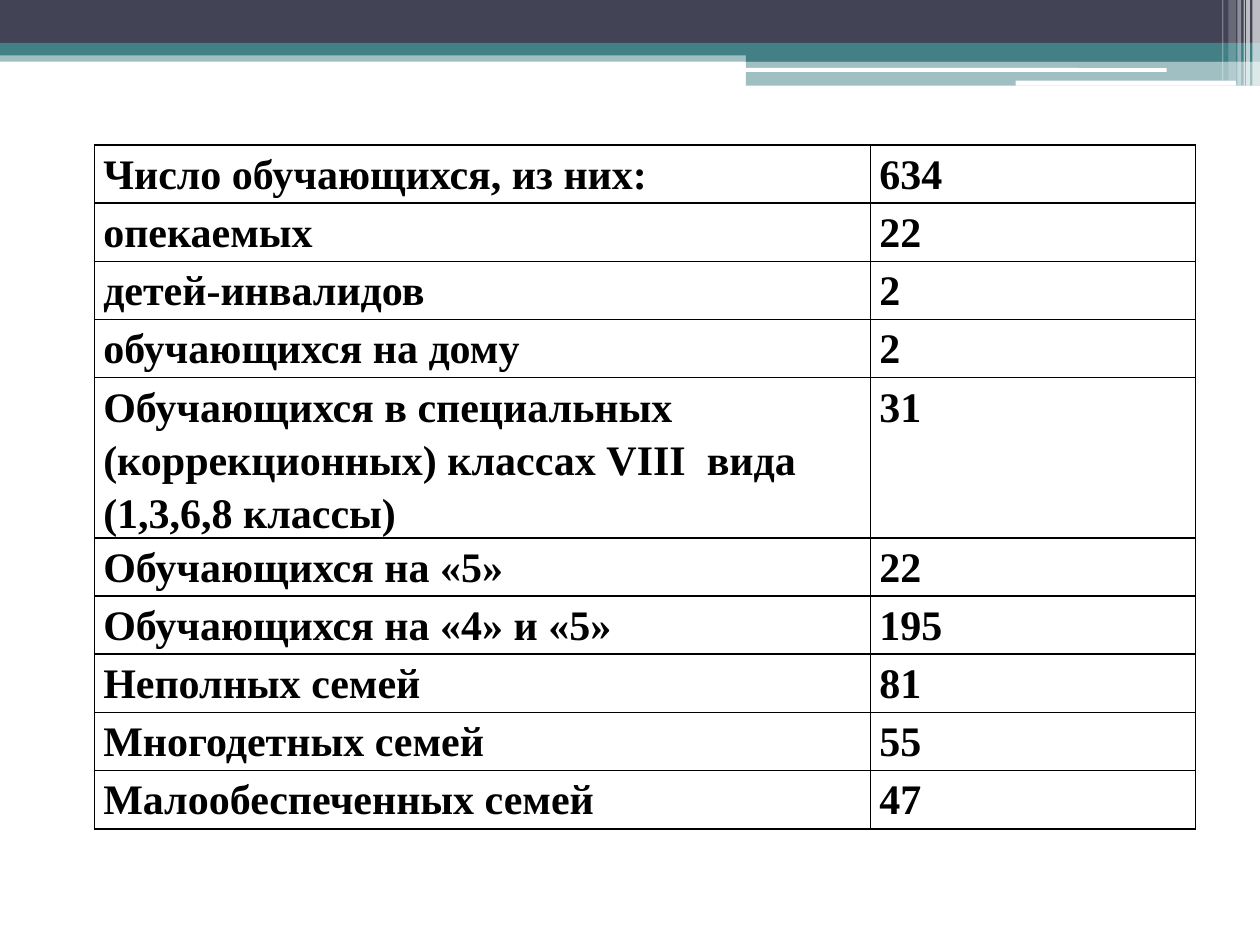
import pptx
import pptx.dml.color
import pptx.enum.shapes
import pptx.oxml
import pptx.oxml.ns
import pptx.util
from lxml import etree

RGBColor = pptx.dml.color.RGBColor
MSO_SHAPE = pptx.enum.shapes.MSO_SHAPE

WHITE = RGBColor(0xFF, 0xFF, 0xFF)
BLACK = RGBColor(0x00, 0x00, 0x00)
TEAL = RGBColor(0x43, 0x80, 0x86)
SLATE = RGBColor(0x42, 0x44, 0x56)


class SlideBuilder:
    """Holds the style and the slide; lengths are in a grid of 100 x 75 units."""

    font = "Times New Roman"
    size = pptx.util.Pt(24)
    columns = 100

    def __init__(self, prs):
        self.unit = prs.slide_width / self.columns
        self.slide = prs.slides.add_slide(prs.slide_layouts[6])

    def grid(self, *units):
        return [pptx.util.Emu(round(u * self.unit)) for u in units]

    def bar(self, x, y, w, h, color, opacity=100, kind=MSO_SHAPE.RECTANGLE):
        sp = self.slide.shapes.add_shape(kind, *self.grid(x, y, w, h))
        sp.shadow.inherit = False
        sp.line.fill.background()
        sp.fill.solid()
        sp.fill.fore_color.rgb = color
        if opacity < 100:
            clr = sp._element.spPr.find(".//" + pptx.oxml.ns.qn("a:srgbClr"))
            alpha = etree.SubElement(clr, pptx.oxml.ns.qn("a:alpha"))
            alpha.set("val", str(opacity * 1000))

    def table(self, x, y, widths, heights, rows):
        frame = self.slide.shapes.add_table(
            len(rows), len(widths), *self.grid(x, y, sum(widths), sum(heights)))
        table = frame.table
        table.first_row = table.horz_banding = False
        for column, width in zip(table.columns, self.grid(*widths)):
            column.width = width
        for row, height, texts in zip(table.rows, self.grid(*heights), rows):
            row.height = height
            for cell, text in zip(row.cells, texts):
                self.cell(cell, text)

    def cell(self, cell, text):
        cell.margin_left, cell.margin_right = self.grid(0.7, 0.7)
        cell.margin_top = cell.margin_bottom = 0
        cell.text = text
        p = cell.text_frame.paragraphs[0]
        p.line_spacing = 1.15
        p.space_after = pptx.util.Pt(10)
        p.font.name = self.font
        p.font.size = self.size
        p.font.bold = True
        p.font.color.rgb = BLACK
        self.borders(cell)
        cell.fill.background()

    def borders(self, cell):
        for side in ("lnL", "lnR", "lnT", "lnB"):
            cell._tc.get_or_add_tcPr().append(pptx.oxml.parse_xml(
                f'<a:{side} {pptx.oxml.ns.nsdecls("a")} w="{pptx.util.Pt(1)}">'
                f'<a:solidFill><a:srgbClr val="{BLACK}"/></a:solidFill></a:{side}>'))


def main():
    prs = pptx.Presentation()
    prs.slide_width = pptx.util.Inches(10)
    prs.slide_height = pptx.util.Inches(7.5)
    s = SlideBuilder(prs)

    # Header bands
    s.bar(0, 4, 100, 0.9, TEAL, 50)
    s.bar(0, 0, 100, 3.4, SLATE)
    s.bar(0, 3.4, 100, 1, TEAL)
    s.bar(59.2, 3.9, 40.8, 1, TEAL)
    s.bar(59.2, 4.8, 40.8, 2, TEAL, 50)

    # White strips in the right-hand band
    for x, y, w, h in ((59.1, 5.4, 33.5, 0.3), (80.6, 6.4, 17.5, 0.4)):
        s.bar(x, y, w, h, WHITE, kind=MSO_SHAPE.ROUNDED_RECTANGLE)

    # Translucent vertical stripes in the corner
    for x, w, h, opacity in (
        (99.4, 0.6, 6.8, 65), (98.9, 0.3, 6.8, 65), (98.7, 0.1, 6.8, 60),
        (98.2, 0.3, 6.8, 40), (97.5, 0.6, 6.4, 20), (97, 0.1, 6.4, 30),
    ):
        s.bar(x, 0, w, h, WHITE, opacity)

    # Student statistics; the long label takes three lines
    rows = [
        ("Число обучающихся, из них:", "634"),
        ("опекаемых", "22"),
        ("детей-инвалидов", "2"),
        ("обучающихся на дому", "2"),
        ("Обучающихся в специальных (коррекционных) классах VIII  вида "
         "(1,3,6,8 классы)", "31"),
        ("Обучающихся на «5»", "22"),
        ("Обучающихся на «4» и «5»", "195"),
        ("Неполных семей", "81"),
        ("Многодетных семей", "55"),
        ("Малообеспеченных семей", "47"),
    ]
    heights = [12.7 if len(label) > 40 else 4.62 for label, _ in rows]
    s.table(7.5, 11.5, (61.6, 25.8), heights, rows)

    prs.save("out.pptx")


if __name__ == "__main__":
    main()
